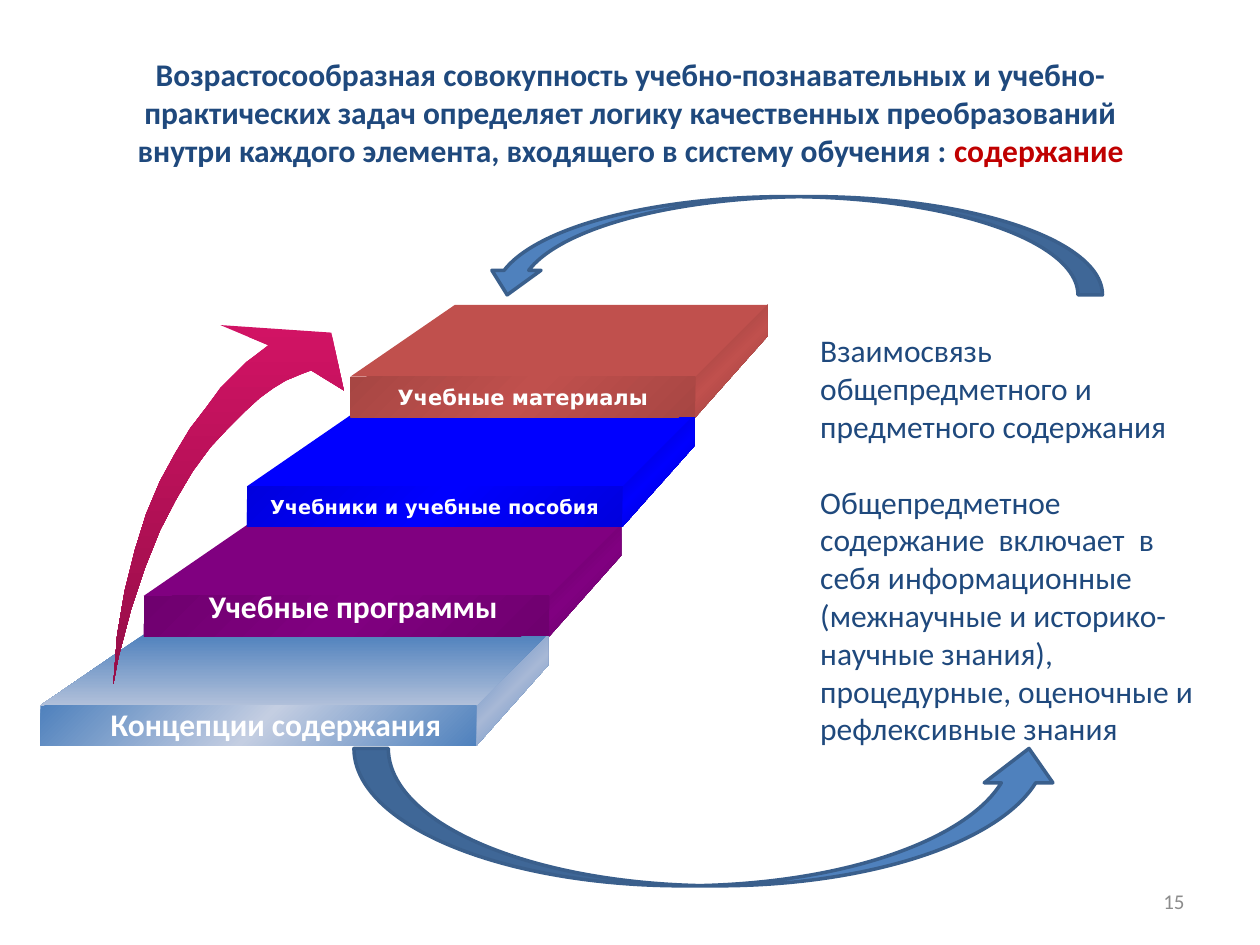
from lxml.etree import SubElement
from pptx import Presentation
from pptx.dml.color import RGBColor
from pptx.enum.shapes import MSO_SHAPE as Shape
from pptx.enum.text import MSO_ANCHOR as Anchor, MSO_AUTO_SIZE as AutoSize, PP_ALIGN as Align
from pptx.oxml.ns import qn
from pptx.util import Inches, Pt

# Content
NAVY, RED, WHITE, GREY = "1F497D", "C00000", "FFFFFF", "8C8C8C"
TITLE = [
    ("Возрастосообразная совокупность учебно-познавательных и учебно-практических задач "
     "определяет логику качественных преобразований внутри каждого элемента, "
     "входящего в систему обучения : ", NAVY),
    ("содержание", RED),
]
RELATIONS = [
    "Взаимосвязь общепредметного и предметного содержания",
    "Общепредметное содержание  включает  в себя информационные (межнаучные и "
    "историко-научные знания), процедурные, оценочные и рефлексивные знания",
]
PAGE = "15"

# Stairs from the top down: label, size, font, top fill, side stops, front stops, label box
# (a label without its own box is centred on the front face)
STAIRS = [
    ("Учебные материалы", 12, "DejaVu Sans", ["C0504D"],
     ["893937", "C0504D", "893937"], ["A74643", "C0504D", "A74643"], None),
    ("Учебники и учебные пособия", 11, "DejaVu Sans", ["0000FF"],
     ["0000B6", "0000FF", "0000B6"], ["0000DE", "0000FF", "0000DE"], None),
    ("Учебные программы", 18, "Calibri", ["800080"],
     ["5C005C", "800080", "5C005C"], ["6F006F", "800080", "6F006F"], (1.56, 4.61, 2.97, 0.4)),
    ("Концепции содержания", 18, "Calibri", ["4F81BD", "B1C0DA"],
     ["4F81BD", "A7B8D6", "4F81BD"], ["4F81BD", "C4CEE2", "4F81BD"], (0.78, 5.55, 3.2, 0.4)),
]
FRONT_LEFT, FRONT_TOP, BACK_RIGHT = 2.78, 2.99, 6.09   # top stair
SHIFT_LEFT, SHIFT_DOWN, SHIFT_RIGHT = 0.82, 0.87, 0.58  # from stair to stair
DEPTH, SLANT, THICKNESS = 0.57, 0.83, 0.32

RISING_ARROW = [
    (0.9, 5.43), (0.93, 5.04), (0.99, 4.69), (1.07, 4.37), (1.16, 4.08), (1.27, 3.82),
    (1.39, 3.6), (1.51, 3.4), (1.64, 3.23), (1.75, 3.08), (1.86, 2.97), (1.96, 2.87),
    (2.04, 2.81), (2.13, 2.74), (1.75, 2.58), (2.63, 2.64), (2.73, 3.1), (2.47, 2.94),
    (2.39, 2.97), (2.27, 3.02), (2.17, 3.08), (2.06, 3.16), (1.94, 3.27), (1.81, 3.4),
    (1.67, 3.55), (1.53, 3.74), (1.4, 3.96), (1.27, 4.21), (1.15, 4.51), (1.04, 4.84),
    (0.94, 5.22),
]
CYCLE_ARROWS = [((3.83, 1.56, 4.92, 0.78), 180), ((2.81, 5.94, 5.63, 1.09), 0)]


def rgb(value):
    return RGBColor.from_string(value)


def paint(shape, colours, angle=45):
    """One colour gives a solid fill, several give an even gradient."""
    shape.shadow.inherit = False
    shape.line.fill.background()
    if len(colours) == 1:
        shape.fill.solid()
        shape.fill.fore_color.rgb = rgb(colours[0])
        return
    shape.fill.gradient()
    shape.fill.gradient_angle = 360 - angle
    stops = next(shape._element.spPr.iter(qn("a:gsLst")))
    stops.clear()
    for i, colour in enumerate(colours):
        stop = SubElement(stops, qn("a:gs"), pos=str(100000 * i // (len(colours) - 1)))
        SubElement(stop, qn("a:srgbClr"), val=colour)


def polygon(slide, points, colours, angle=45):
    start, *corners = [(Inches(x), Inches(y)) for x, y in points]
    builder = slide.shapes.build_freeform(*start)
    builder.add_line_segments(corners, close=True)
    paint(builder.convert_to_shape(), colours, angle)


def place(shape, box):
    for side, value in zip(("left", "top", "width", "height"), box):
        setattr(shape, side, Inches(value))


def write(paragraph, runs, size, font="Calibri", bold=False, align=Align.LEFT):
    paragraph.alignment = align
    for text, colour in runs:
        run = paragraph.add_run()
        run.text = text
        for key, value in {"size": Pt(size), "name": font, "bold": bold}.items():
            setattr(run.font, key, value)
        run.font.color.rgb = rgb(colour)


def set_frame(shape, anchor=Anchor.TOP, wrap=True):
    frame = shape.text_frame
    settings = {"word_wrap": wrap, "vertical_anchor": anchor, "auto_size": AutoSize.NONE}
    for key, value in settings.items():
        setattr(frame, key, value)
    return frame


def text_box(slide, box, anchor=Anchor.TOP):
    return set_frame(slide.shapes.add_textbox(*map(Inches, box)), anchor).paragraphs[0]


def add_stair(slide, level, stair):
    label, size, font, top_fill, side_fill, front_fill, label_box = stair
    left = FRONT_LEFT - level * SHIFT_LEFT
    y = FRONT_TOP + level * SHIFT_DOWN
    back = BACK_RIGHT - level * SHIFT_RIGHT
    right = back - DEPTH
    polygon(slide, [(back, y - THICKNESS), (right, y + THICKNESS), (right, y),
                    (back, y - DEPTH)], side_fill)
    polygon(slide, [(right, y), (left, y), (left + SLANT, y - DEPTH),
                    (back, y - DEPTH)], top_fill, 90)
    front = slide.shapes.add_shape(
        Shape.RECTANGLE, *map(Inches, (left, y, right - left, THICKNESS)))
    paint(front, front_fill)
    if label_box:
        write(text_box(slide, label_box), [(label, WHITE)], size, font, True)
    else:
        paragraph = set_frame(front, Anchor.MIDDLE, False).paragraphs[0]
        write(paragraph, [(label, WHITE)], size, font, True, Align.CENTER)


def main():
    deck = Presentation()
    deck.slide_width, deck.slide_height = Inches(10), Inches(7.5)
    slide = deck.slides.add_slide(deck.slide_layouts[1])

    # Title
    title = slide.shapes.title
    place(title, (0.94, 0.39, 8.13, 1.01))
    write(set_frame(title).paragraphs[0], TITLE, 18, bold=True, align=Align.CENTER)

    # Explanation on the right
    relations = slide.placeholders[1]
    place(relations, (6.41, 2.58, 3.2, 3.43))
    frame = set_frame(relations)
    for i, text in enumerate(RELATIONS):
        paragraph = frame.add_paragraph() if i else frame.paragraphs[0]
        write(paragraph, [(text, NAVY)], 18)
        paragraph.space_before = Pt(21.6 * i)
        props = paragraph._p.get_or_add_pPr()
        props.set("marL", "0")
        props.set("indent", "0")
        SubElement(props, qn("a:buNone"))

    # Stairs, the lowest first so that each covers the one below
    for level, stair in reversed(list(enumerate(STAIRS))):
        add_stair(slide, level, stair)

    # Arrows
    polygon(slide, RISING_ARROW, ["D11364", "960E48"], 90)
    for box, rotation in CYCLE_ARROWS:
        arrow = slide.shapes.add_shape(Shape.CURVED_UP_ARROW, *map(Inches, box))
        paint(arrow, ["4F81BD"])
        arrow.rotation = rotation
        arrow.line.color.rgb = rgb("3A5F8C")
        arrow.line.width = Pt(2)

    # Page number
    write(text_box(slide, (7.17, 6.95, 2.33, 0.4), Anchor.MIDDLE),
          [(PAGE, GREY)], 12, align=Align.RIGHT)

    deck.save("out.pptx")


if __name__ == "__main__":
    main()
